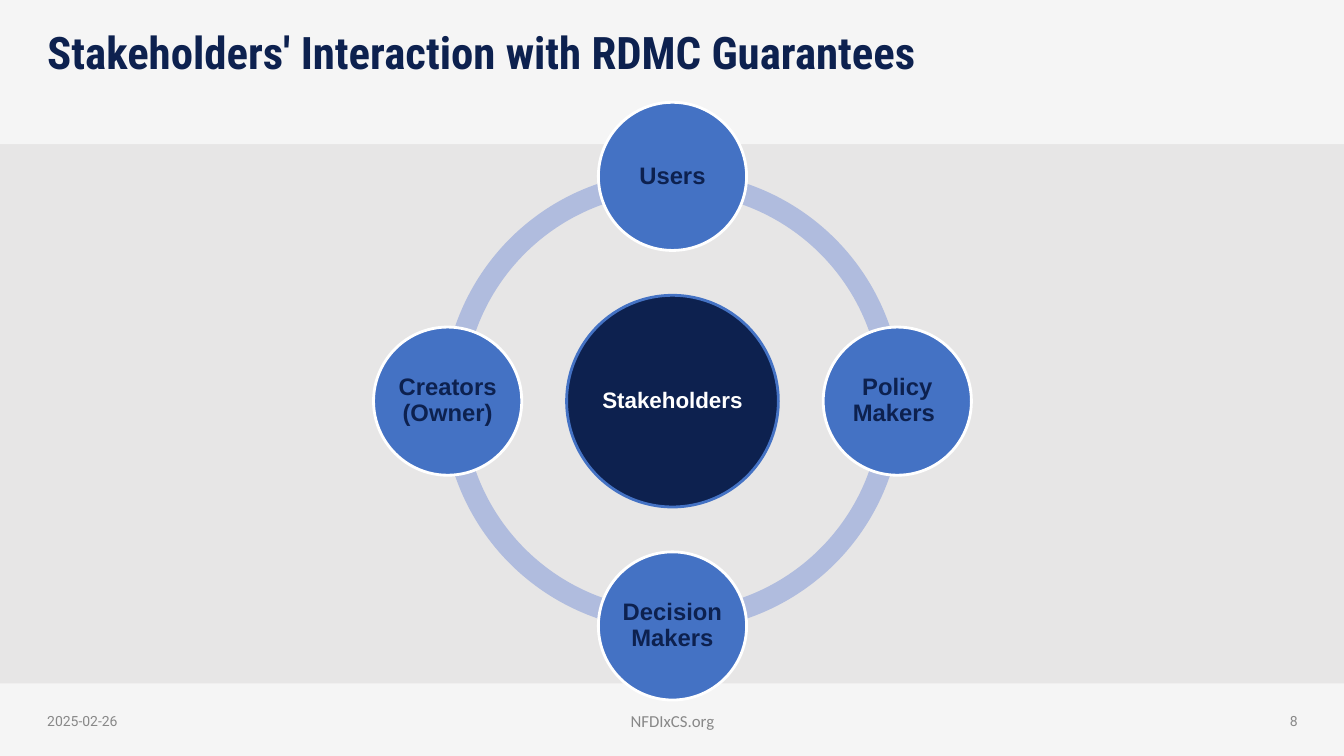
from lxml.etree import SubElement
from pptx import Presentation
from pptx.dml.color import RGBColor
from pptx.enum.shapes import MSO_SHAPE
from pptx.enum.text import MSO_ANCHOR, PP_ALIGN
from pptx.oxml.ns import qn
from pptx.util import Inches, Pt

HUES = {
    "back": "E7E6E6", "white": "FFFFFF", "navy": "0D214F",
    "blue": "4472C4", "ring": "B0BCDE", "gray": "888888",
}


def add_form(kind, box, fill, edge=None):
    form = slide.shapes.add_shape(kind, *map(Inches, box))
    form.shadow.inherit = False
    form.fill.solid()
    form.fill.fore_color.rgb = RGBColor.from_string(HUES[fill])
    if edge:
        form.line.color.rgb = RGBColor.from_string(HUES[edge])
        form.line.width = Pt(2)
    else:
        form.line.fill.background()
    return form


def write(shape, text, face, size, hue, align, bold=False, anchor=MSO_ANCHOR.MIDDLE):
    frame = shape.text_frame
    frame.text = text
    frame.word_wrap = True
    frame.vertical_anchor = anchor
    para = frame.paragraphs[0]
    para.alignment = align
    if bold:
        para.line_spacing = 0.9
    font = para.runs[0].font
    font.name, font.size, font.bold = face, Pt(size), bold
    font.color.rgb = RGBColor.from_string(HUES[hue])


deck = Presentation()
deck.slide_width, deck.slide_height = Inches(13.33), Inches(7.5)
slide = deck.slides.add_slide(deck.slide_layouts[6])
slide.background.fill.solid()
slide.background.fill.fore_color.rgb = RGBColor.from_string(HUES["back"])

# Pale bands at foot and head
for top, height in [(6.78, 0.72), (0, 1.43)]:
    band = add_form(MSO_SHAPE.RECTANGLE, (0, top, 13.33, height), "white")
    tint = band.fill._xPr.find(qn("a:solidFill"))[0]
    SubElement(tint, qn("a:alpha")).set("val", "60000")

title = slide.shapes.add_textbox(Inches(0.37), Inches(0.26), Inches(12.6), Inches(1.17))
write(title, "Stakeholders' Interaction with RDMC Guarantees", "Roboto Condensed",
      32, "navy", PP_ALIGN.LEFT, bold=True, anchor=MSO_ANCHOR.TOP)

footers = [
    ("2025-02-26", 0.37, 3, "Roboto", 10, PP_ALIGN.LEFT),
    ("8", 9.97, 3, "Roboto", 10, PP_ALIGN.RIGHT),
    ("NFDIxCS.org", 3.74, 5.86, "Calibri", 12, PP_ALIGN.CENTER),
]
for text, left, width, face, size, align in footers:
    box = slide.shapes.add_textbox(Inches(left), Inches(6.95), Inches(width), Inches(0.4))
    write(box, text, face, size, "gray", align)

# Ring of four quarter arcs; a quarter turn is 54 adjustment units
MID_X, MID_Y, RING, REACH = 6.67, 3.98, 4.56, 2.23
QUARTER = 54
for turn in range(4):
    arc = add_form(MSO_SHAPE.BLOCK_ARC,
                   (MID_X - RING / 2, MID_Y - RING / 2, RING, RING), "ring")
    arc.adjustments[0] = turn * QUARTER
    arc.adjustments[1] = (turn + 1) % 4 * QUARTER
    arc.adjustments[2] = 0.046

# Hub and the four groups around it: label, steps right and down, looks
circles = [
    ("Stakeholders", 0, 0, 2.1, "navy", "blue", 16, "white"),
    ("Users", 0, -1, 1.47, "blue", "white", 17, "navy"),
    ("Policy Makers ", 1, 0, 1.47, "blue", "white", 17, "navy"),
    ("Decision Makers", 0, 1, 1.47, "blue", "white", 17, "navy"),
    ("Creators (Owner)", -1, 0, 1.47, "blue", "white", 17, "navy"),
]
for label, right, down, wide, fill, edge, size, hue in circles:
    left = MID_X + right * REACH - wide / 2
    top = MID_Y + down * REACH - wide / 2
    disc = add_form(MSO_SHAPE.OVAL, (left, top, wide, wide), fill, edge)
    frame = disc.text_frame
    frame.margin_left = frame.margin_right = Inches(0.02)
    frame.margin_top = frame.margin_bottom = Inches(0.02)
    write(disc, label, "Arial", size, hue, PP_ALIGN.CENTER, bold=True)

deck.save("out.pptx")
